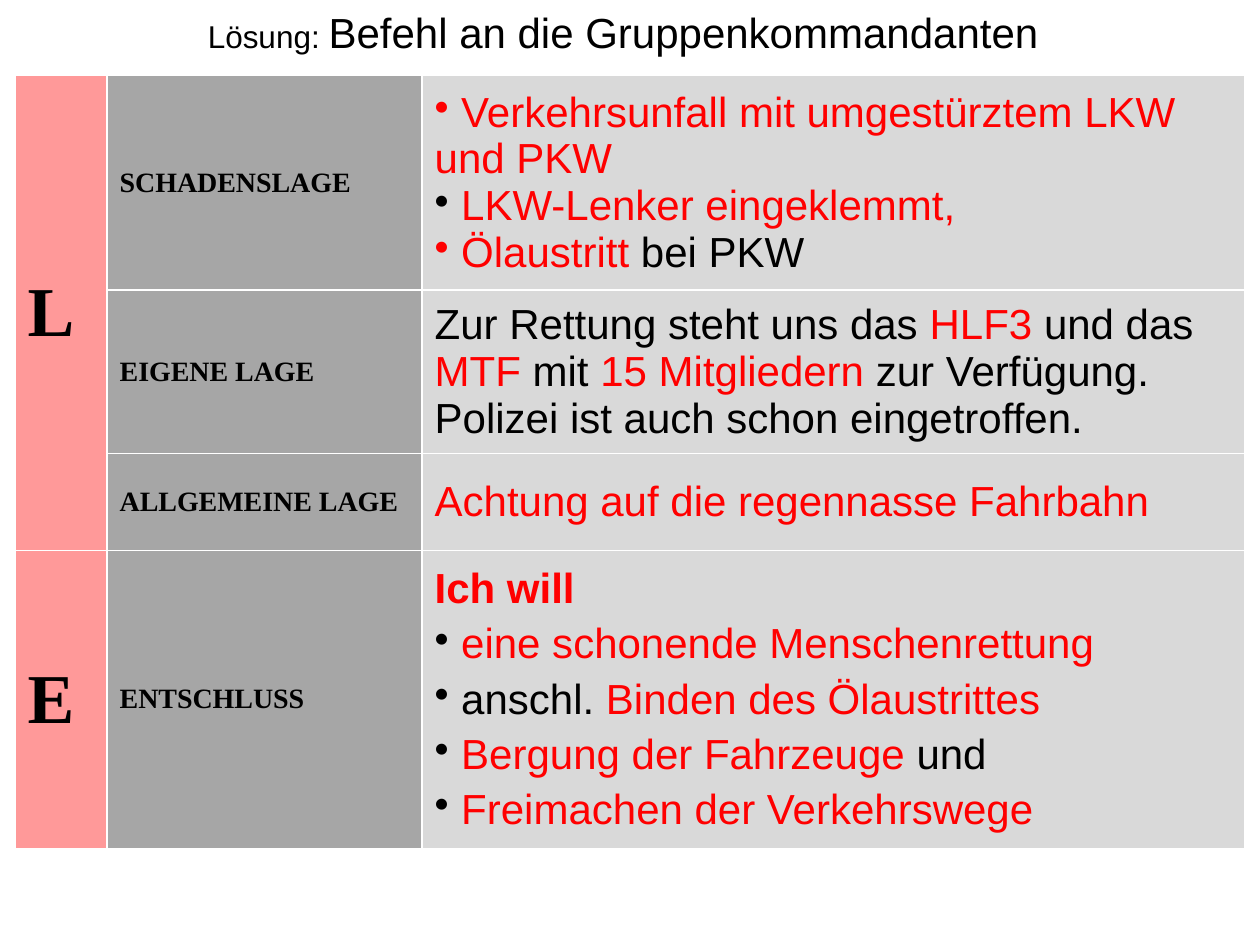
from dataclasses import dataclass

from lxml.etree import SubElement
from pptx import Presentation
from pptx.dml.color import RGBColor
from pptx.enum.text import MSO_ANCHOR, PP_ALIGN
from pptx.oxml.ns import qn
from pptx.table import Table, _Cell
from pptx.text.text import TextFrame
from pptx.util import Inches, Pt

BLACK, RED, WHITE = "000000", "FF0000", "FFFFFF"
PINK, DARK_GRAY, LIGHT_GRAY = "FF9999", "A6A6A6", "D9D9D9"
LETTER = {"name": "Times New Roman", "size": Pt(40), "bold": True}
LABEL = {"name": "Times New Roman", "size": Pt(16), "bold": True}
BODY = {"name": "Arial", "size": Pt(24), "bold": False}
STRONG = {**BODY, "bold": True}
SMALL = {**BODY, "size": Pt(18)}


@dataclass
class Run:
    text: str
    color: str = BLACK
    style: dict | None = None


@dataclass
class Line:
    runs: list[Run]
    bullet: bool = False
    space_before: float = 0
    alignment: PP_ALIGN = PP_ALIGN.LEFT


@dataclass
class Section:
    label: str
    height: float
    lines: list[Line]


@dataclass
class Group:
    letter: str
    first: int
    last: int


GAP = 4.8
COLUMN_WIDTHS = [0.73, 2.5, 6.53]
GROUPS = [Group("L", 0, 2), Group("E", 3, 3)]
SECTIONS = [
    Section("SCHADENSLAGE", 1.7, [
        Line([Run(" Verkehrsunfall mit umgestürztem LKW und PKW", RED)], True),
        Line([Run(" "), Run("LKW-Lenker eingeklemmt,", RED)], True),
        Line([Run(" Ölaustritt", RED), Run(" bei PKW")], True),
    ]),
    Section("EIGENE LAGE", 1.3, [
        Line([
            Run("Zur Rettung steht uns das"), Run(" HLF3 ", RED),
            Run("und das"), Run(" MTF ", RED),
            Run("mit"), Run(" 15 Mitgliedern ", RED),
            Run("zur Verfügung. Polizei ist auch schon eingetroffen."),
        ], space_before=GAP),
    ]),
    Section("ALLGEMEINE LAGE", 0.76, [
        Line([Run("Achtung auf die regennasse Fahrbahn", RED)], space_before=GAP),
    ]),
    Section("ENTSCHLUSS", 2.36, [
        Line([Run("Ich will", RED, STRONG)], space_before=GAP),
        Line([Run(" "), Run("eine schonende Menschenrettung", RED)], True, GAP),
        Line([Run(" anschl. "), Run("Binden des Ölaustrittes", RED)], True, GAP),
        Line([Run(" "), Run("Bergung der Fahrzeuge ", RED), Run("und")], True, GAP),
        Line([Run(" "), Run("Freimachen der Verkehrswege", RED)], True, GAP),
    ]),
]


def rgb(color: str) -> RGBColor:
    return RGBColor.from_string(color)


def write_lines(frame: TextFrame, lines: list[Line]) -> None:
    for index, line in enumerate(lines):
        paragraph = frame.add_paragraph() if index else frame.paragraphs[0]
        paragraph.alignment = line.alignment
        paragraph.space_before = Pt(line.space_before)
        if line.bullet:
            properties = paragraph._p.get_or_add_pPr()
            SubElement(properties, qn("a:buChar"), char="•")
        for item in line.runs:
            run = paragraph.add_run()
            run.text = item.text
            run.font.color.rgb = rgb(item.color)
            for name, value in (item.style or BODY).items():
                setattr(run.font, name, value)


def draw_borders(cell: _Cell) -> None:
    properties = cell._tc.get_or_add_tcPr()
    for side in ("lnL", "lnR", "lnT", "lnB"):
        border = SubElement(properties, qn(f"a:{side}"), w=str(Pt(1)))
        fill = SubElement(border, qn("a:solidFill"))
        SubElement(fill, qn("a:srgbClr"), val=WHITE)


def fill_cell(cell: _Cell, color: str, lines: list[Line]) -> None:
    draw_borders(cell)
    cell.fill.solid()
    cell.fill.fore_color.rgb = rgb(color)
    cell.vertical_anchor = MSO_ANCHOR.MIDDLE
    write_lines(cell.text_frame, lines)


def fill_table(table: Table) -> None:
    table.first_row = table.horz_banding = False
    for column, width in zip(table.columns, COLUMN_WIDTHS):
        column.width = Inches(width)
    for index, section in enumerate(SECTIONS):
        table.rows[index].height = Inches(section.height)
        label = Line([Run(section.label, style=LABEL)])
        fill_cell(table.cell(index, 1), DARK_GRAY, [label])
        fill_cell(table.cell(index, 2), LIGHT_GRAY, section.lines)
    for group in GROUPS:
        cell = table.cell(group.first, 0)
        if group.last > group.first:
            cell.merge(table.cell(group.last, 0))
        fill_cell(cell, PINK, [Line([Run(group.letter, style=LETTER)])])


def main() -> None:
    presentation = Presentation()
    presentation.slide_width, presentation.slide_height = Inches(10), Inches(7.5)
    slide = presentation.slides.add_slide(presentation.slide_layouts[6])

    title = slide.shapes.add_textbox(Inches(0.12), Inches(0), Inches(9.65), Inches(0.5))
    title.text_frame.word_wrap = True
    write_lines(title.text_frame, [Line([
        Run("Lösung: ", style=SMALL), Run("Befehl an die Gruppenkommandanten"),
    ], alignment=PP_ALIGN.CENTER)])

    height = sum(section.height for section in SECTIONS)
    frame = slide.shapes.add_table(
        len(SECTIONS), len(COLUMN_WIDTHS),
        Inches(0.12), Inches(0.6), Inches(sum(COLUMN_WIDTHS)), Inches(height),
    )
    fill_table(frame.table)
    presentation.save("out.pptx")


if __name__ == "__main__":
    main()
